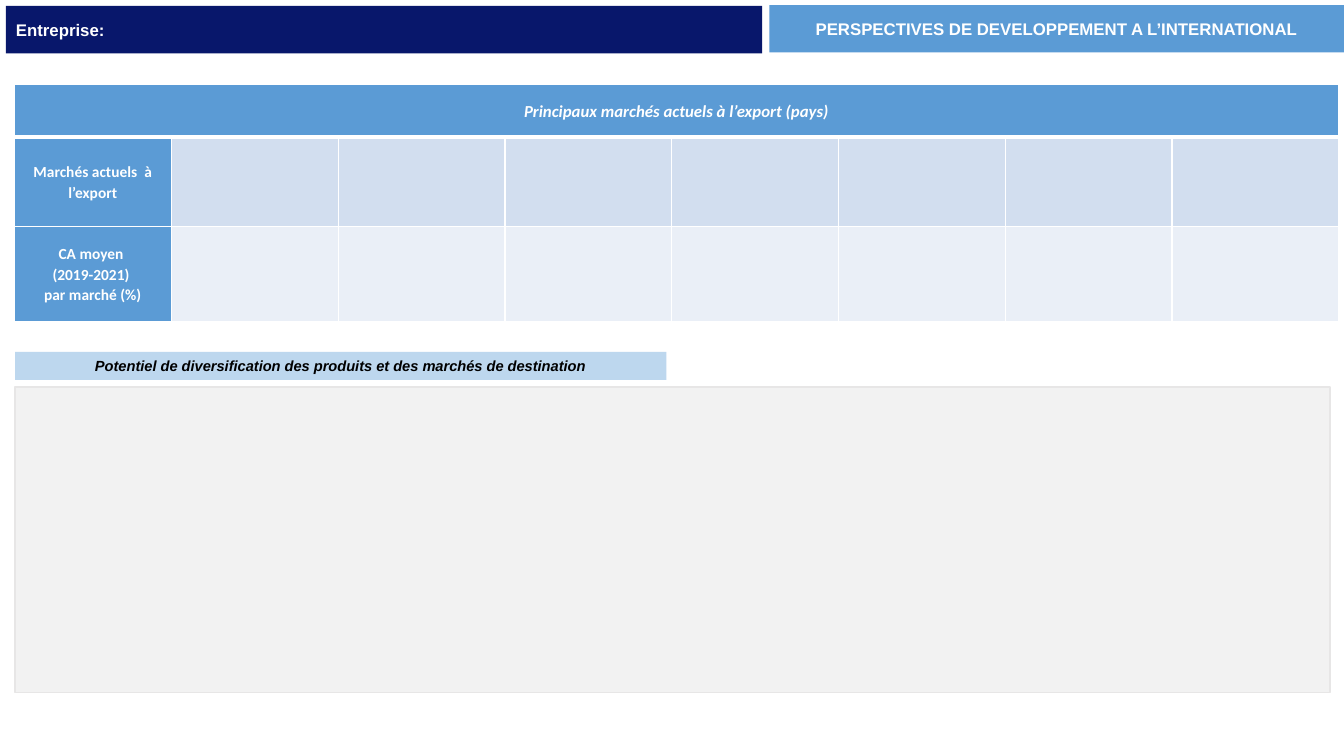
from lxml import etree
from pptx import Presentation
from pptx.dml.color import RGBColor
from pptx.enum import shapes, text
from pptx.oxml import ns
from pptx.util import Inches, Pt

WHITE = RGBColor(0xFF, 0xFF, 0xFF)
BLACK = RGBColor(0x00, 0x00, 0x00)
NAVY = RGBColor(0x08, 0x17, 0x6B)
BLUE = RGBColor(0x5B, 0x9B, 0xD5)
PALE_BLUE = RGBColor(0xBD, 0xD7, 0xEE)
MARKET_BAND = RGBColor(0xD2, 0xDE, 0xEF)
SALES_BAND = RGBColor(0xEA, 0xEF, 0xF7)
PANEL_GREY = RGBColor(0xF2, 0xF2, 0xF2)
EDGE_GREY = RGBColor(0xE7, 0xE6, 0xE6)

TABLE_ROWS = [
    ("Principaux marchés actuels à l’export (pays)", 0.52, BLUE),
    ("Marchés actuels  à l’export", 0.89, MARKET_BAND),
    ("CA moyen \n(2019-2021) \npar marché (%)", 0.94, SALES_BAND),
]
LABEL_WIDTH = 1.56
MARKET_COUNT = 7


def apply(target, values):
    """Set every attribute of the dict on the target."""
    for key, value in values.items():
        setattr(target, key, value)


def write(frame, wording, color, alignment, font, paragraph_format=None):
    """Write one formatted paragraph into a text frame."""
    paragraph = frame.paragraphs[0]
    paragraph.text = wording
    apply(paragraph, {"alignment": alignment, **(paragraph_format or {})})
    for run in paragraph.runs:
        apply(run.font, font)
        run.font.color.rgb = color


def add_block(slide, box, fill, edge=None):
    """Add a flat rectangle, with a thin edge when a colour is given."""
    block = slide.shapes.add_shape(
        shapes.MSO_SHAPE.RECTANGLE, *map(Inches, box))
    block.shadow.inherit = False
    block.fill.solid()
    block.fill.fore_color.rgb = fill
    if edge is None:
        block.line.fill.background()
    else:
        block.line.color.rgb = edge
        block.line.width = Pt(1)
    return block


def add_banner(slide, left, top, width, height):
    """Place the company band and the slide title side by side."""
    font = {"name": "Arial", "size": Pt(12), "bold": True}
    middle = {"vertical_anchor": text.MSO_ANCHOR.MIDDLE, "word_wrap": True,
              "auto_size": text.MSO_AUTO_SIZE.NONE}
    company_width, title_offset = 7.5, 7.57
    title = slide.shapes.title
    apply(title, {"left": Inches(left + title_offset), "top": Inches(top),
                  "width": Inches(width - title_offset),
                  "height": Inches(height)})
    title.fill.solid()
    title.fill.fore_color.rgb = BLUE
    company = add_block(slide, (left, top + 0.01, company_width, height), NAVY)
    for band, wording, alignment in (
            (title, "PERSPECTIVES DE DEVELOPPEMENT A L’INTERNATIONAL",
             text.PP_ALIGN.CENTER),
            (company, "Entreprise:", text.PP_ALIGN.LEFT)):
        apply(band.text_frame, middle)
        write(band.text_frame, wording, WHITE, alignment, font)


def set_borders(cell, widths):
    """Draw white cell borders, placed before the cell fill."""
    properties = cell._tc.get_or_add_tcPr()
    for position, (side, width) in enumerate(widths.items()):
        line = etree.Element(ns.qn(f"a:{side}"), w=str(Pt(width)))
        solid = etree.SubElement(line, ns.qn("a:solidFill"))
        etree.SubElement(solid, ns.qn("a:srgbClr"), val=str(WHITE))
        properties.insert(position, line)


def add_markets(slide, left, top, width):
    """Build the table of current export markets."""
    height = sum(row_height for _, row_height, _ in TABLE_ROWS)
    markets = slide.shapes.add_table(
        len(TABLE_ROWS), MARKET_COUNT + 1,
        *map(Inches, (left, top, width, height))).table
    market_width = (width - LABEL_WIDTH) / MARKET_COUNT
    for index, column in enumerate(markets.columns):
        column.width = Inches(market_width if index else LABEL_WIDTH)
    spacing = {"line_spacing": 1.07, "space_after": Pt(8)}
    margins = {"margin_left": Inches(0.07), "margin_right": Inches(0.07),
               "margin_top": 0, "margin_bottom": 0,
               "vertical_anchor": text.MSO_ANCHOR.MIDDLE}
    for row, (wording, row_height, band) in enumerate(TABLE_ROWS):
        header = row == 0
        markets.rows[row].height = Inches(row_height)
        for column in range(MARKET_COUNT + 1):
            cell = markets.cell(row, column)
            cell.fill.solid()
            cell.fill.fore_color.rgb = band if column else BLUE
            set_borders(cell, {"lnL": 1, "lnR": 1,
                               "lnT": 3 if row == 1 else 1,
                               "lnB": 3 if header else 1})
        label = markets.cell(row, 0)
        apply(label, margins)
        write(label.text_frame, wording, WHITE, text.PP_ALIGN.CENTER,
              {"name": "Calibri", "size": Pt(12 if header else 11),
               "bold": True, "italic": header}, spacing)
    markets.cell(0, 0).merge(markets.cell(0, MARKET_COUNT))


def add_potential(slide, left, top, width, height):
    """Place the diversification heading above its empty panel."""
    panel_offset = 0.35
    add_block(slide, (left, top + panel_offset, width, height - panel_offset),
              PANEL_GREY, EDGE_GREY)
    heading = add_block(slide, (left, top, 6.46, 0.28), PALE_BLUE)
    apply(heading.text_frame, {"vertical_anchor": text.MSO_ANCHOR.TOP,
                               "word_wrap": True,
                               "auto_size": text.MSO_AUTO_SIZE.SHAPE_TO_FIT_TEXT})
    write(heading.text_frame,
          "Potentiel de diversification des produits et des marchés de destination",
          BLACK, text.PP_ALIGN.CENTER,
          {"name": "Arial", "size": Pt(10.5), "bold": True, "italic": True})


def main():
    """Build and save the slide."""
    deck = Presentation()
    apply(deck, {"slide_width": Inches(13.33), "slide_height": Inches(7.5)})
    slide = deck.slides.add_slide(deck.slide_layouts[5])
    add_banner(slide, 0.06, 0.05, 13.27, 0.47)
    add_potential(slide, 0.15, 3.49, 13.04, 3.38)
    add_markets(slide, 0.14, 0.84, 13.14)
    deck.save("out.pptx")


if __name__ == "__main__":
    main()
